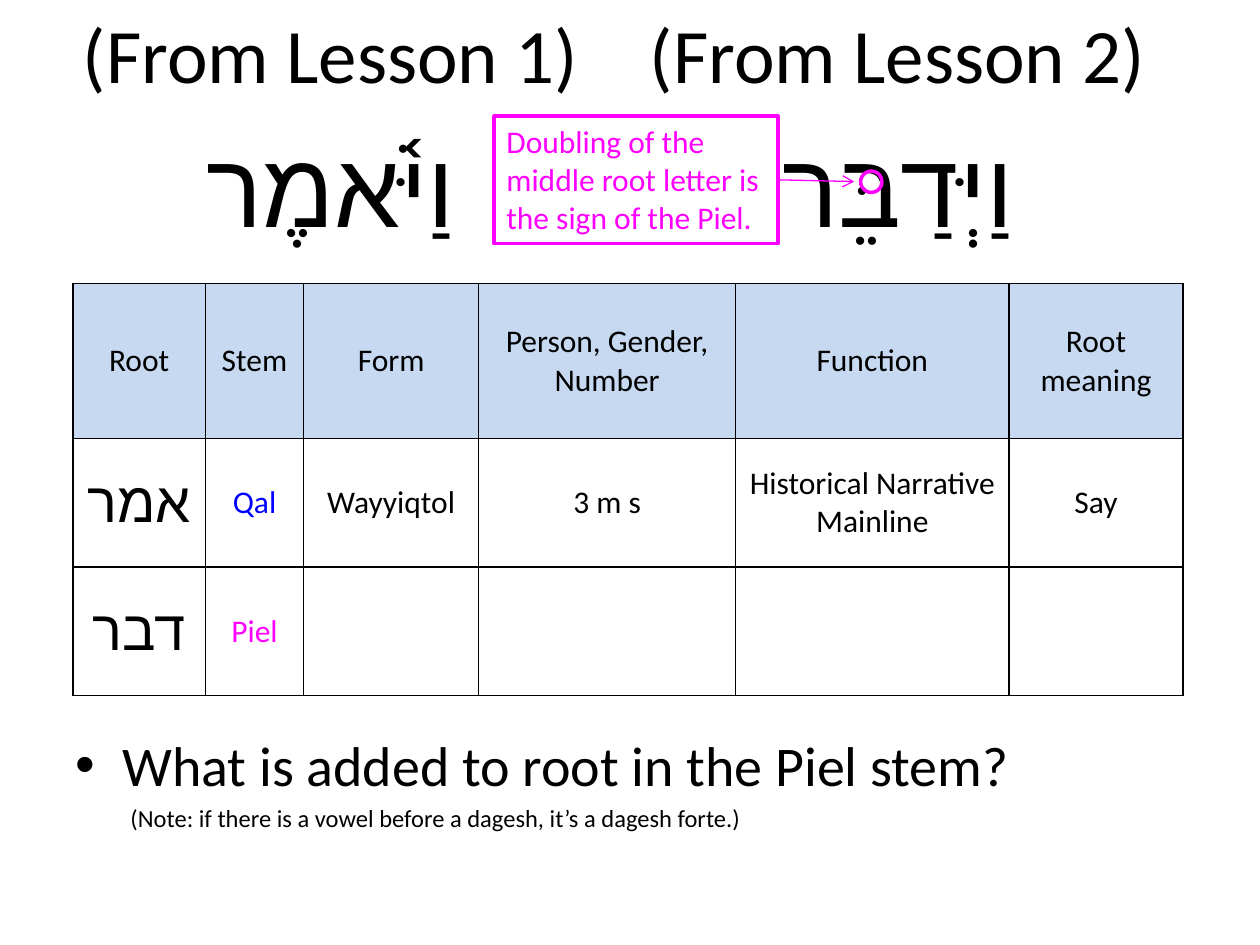
import pptx
import pptx.util
import pptx.dml.color
import pptx.enum.shapes
import pptx.enum.text
import pptx.oxml.ns
import pptx.oxml.xmlchemy

Cm, Pt = pptx.util.Cm, pptx.util.Pt
RGBColor = pptx.dml.color.RGBColor
MSO_SHAPE = pptx.enum.shapes.MSO_SHAPE
ANCHOR = pptx.enum.text.MSO_ANCHOR
ALIGN = pptx.enum.text.PP_ALIGN

BLACK = RGBColor(0x00, 0x00, 0x00)
BLUE = RGBColor(0x00, 0x00, 0xFF)
MAGENTA = RGBColor(0xFF, 0x00, 0xFF)
HEADER_FILL = RGBColor(0xC6, 0xD9, 0xF1)

COLUMNS = [2.67, 1.98, 3.53, 5.18, 5.51, 3.51]
ROWS = [3.12, 2.59, 2.59]
CELLS = [
    ["Root", "Stem", "Form", "Person, Gender,\nNumber", "Function", "Root meaning"],
    ["אמר", "Qal", "Wayyiqtol", "3 m s", "Historical Narrative\nMainline", "Say"],
    ["דבר", "Piel", "", "", "", ""],
]
STEM_COLORS = {"Qal": BLUE, "Piel": MAGENTA}


def add_xml(parent, tag, **attrs):
    el = pptx.oxml.xmlchemy.OxmlElement(tag)
    for name, value in attrs.items():
        el.set(name, str(value))
    parent.append(el)
    return el


def add_run(p, text, size, color=BLACK, font="Calibri"):
    r = p.add_run()
    r.text = text
    r.font.size = Pt(size)
    r.font.name = font
    r.font.color.rgb = color
    return r


def add_hebrew(p, text, size):
    """Right-to-left run, with the font set for complex script too."""
    p.alignment = ALIGN.CENTER
    p._p.get_or_add_pPr().set("rtl", "1")
    r = add_run(p, text, size, font="Arial")
    r._r.get_or_add_rPr().set("lang", "he-IL")
    add_xml(r._r.get_or_add_rPr(), "a:cs", typeface="Arial")


def space_before(p, percent):
    spacing = add_xml(p._p.get_or_add_pPr(), "a:spcBef")
    add_xml(spacing, "a:spcPct", val=percent * 1000)


def add_textbox(slide, x, y, w, h, anchor=ANCHOR.TOP):
    tf = slide.shapes.add_textbox(Cm(x), Cm(y), Cm(w), Cm(h)).text_frame
    tf.word_wrap = True
    tf.vertical_anchor = anchor
    return tf


def add_word(slide, x, y, w, heading, word):
    """Lesson heading with its Hebrew verb below."""
    p = add_textbox(slide, x, y, w, 2.11, ANCHOR.MIDDLE).paragraphs[0]
    p.alignment = ALIGN.CENTER
    add_run(p, heading, 44)
    p = add_textbox(slide, x, y + 2.34, w, 2.74).paragraphs[0]
    add_hebrew(p, word, 60)
    space_before(p, 20)


def add_borders(cell):
    tcPr = cell._tc.get_or_add_tcPr()
    for side in ("a:lnL", "a:lnR", "a:lnT", "a:lnB"):
        ln = add_xml(tcPr, side, w=Pt(1))
        add_xml(add_xml(ln, "a:solidFill"), "a:srgbClr", val=BLACK)


def add_parsing_table(slide, x, y):
    table = slide.shapes.add_table(len(ROWS), len(COLUMNS), Cm(x), Cm(y),
                                   Cm(sum(COLUMNS)), Cm(sum(ROWS))).table
    table.first_row = table.horz_banding = False
    for column, width in zip(table.columns, COLUMNS):
        column.width = Cm(width)
    for i, (row, height) in enumerate(zip(table.rows, ROWS)):
        row.height = Cm(height)
        for j, text in enumerate(CELLS[i]):
            cell = table.cell(i, j)
            add_borders(cell)
            if i == 0:
                cell.fill.solid()
                cell.fill.fore_color.rgb = HEADER_FILL
            else:
                cell.fill.background()
            cell.vertical_anchor = ANCHOR.MIDDLE
            if not text:
                continue
            tf = cell.text_frame
            for k, line in enumerate(text.split("\n")):
                p = tf.add_paragraph() if k else tf.paragraphs[0]
                if i and j == 0:
                    add_hebrew(p, line, 32)
                else:
                    p.alignment = ALIGN.CENTER
                    add_run(p, line, 18, STEM_COLORS.get(line, BLACK))


def add_outline(slide, kind, x, y, w, h, line_width):
    sp = slide.shapes.add_shape(kind, Cm(x), Cm(y), Cm(w), Cm(h))
    sp.shadow.inherit = False
    sp.fill.background()
    sp.line.color.rgb = MAGENTA
    sp.line.width = Pt(line_width)
    return sp


def add_callout(slide, x, y, w, h):
    """Boxed remark with an arrow to the ringed dagesh."""
    add_outline(slide, MSO_SHAPE.OVAL, x + 7.39, y + 1.11, 0.43, 0.43, 2)
    box = add_outline(slide, MSO_SHAPE.RECTANGLE, x, y, w, h, 2.25)
    tf = box.text_frame
    tf.word_wrap = True
    tf.vertical_anchor = ANCHOR.TOP
    p = tf.paragraphs[0]
    p.alignment = ALIGN.LEFT
    add_run(p, "Doubling of the middle root letter is the sign of the Piel.", 18, MAGENTA)

    arrow = slide.shapes.add_connector(pptx.enum.shapes.MSO_CONNECTOR.STRAIGHT,
                                       Cm(x + w), Cm(y + h / 2), Cm(x + 7.26), Cm(y + 1.32))
    arrow.begin_connect(box, 3)
    arrow.line.color.rgb = MAGENTA
    arrow.line.width = Pt(0.75)
    add_xml(arrow.line._get_or_add_ln(), "a:tailEnd", type="arrow")
    add_xml(arrow._element.spPr, "a:effectLst")


def add_question(slide, x, y, w, h):
    tf = add_textbox(slide, x, y, w, h)
    p = tf.paragraphs[0]
    pPr = p._p.get_or_add_pPr()
    pPr.set("marL", str(Cm(0.95)))
    pPr.set("indent", str(-Cm(0.95)))
    space_before(p, 20)
    add_xml(pPr, "a:buFont", typeface="Arial")
    add_xml(pPr, "a:buChar", char="•")
    add_run(p, "What is added to root in the Piel stem?", 32)

    p = tf.add_paragraph()
    p.level = 1
    pPr = p._p.get_or_add_pPr()
    pPr.set("marL", str(Cm(1.11)))
    pPr.set("indent", "0")
    space_before(p, 20)
    add_run(p, "(Note: if there is a vowel before a dagesh, it’s a dagesh forte.)", 14)


def main():
    prs = pptx.Presentation()
    prs.slide_width, prs.slide_height = Cm(25.4), Cm(19.05)
    slide = prs.slides.add_slide(prs.slide_layouts[6])
    add_word(slide, 1.27, 0, 10.8, "(From Lesson 1)", "וַיֹּ֫אמֶר")
    add_parsing_table(slide, 1.47, 5.72)
    add_word(slide, 12.7, 0, 10.8, "(From Lesson 2)", "וַיְּדַבֵּר")
    add_callout(slide, 9.96, 2.34, 5.72, 2.57)
    add_question(slide, 1.27, 14.61, 23.5, 3.18)
    prs.save("out.pptx")


if __name__ == "__main__":
    main()
